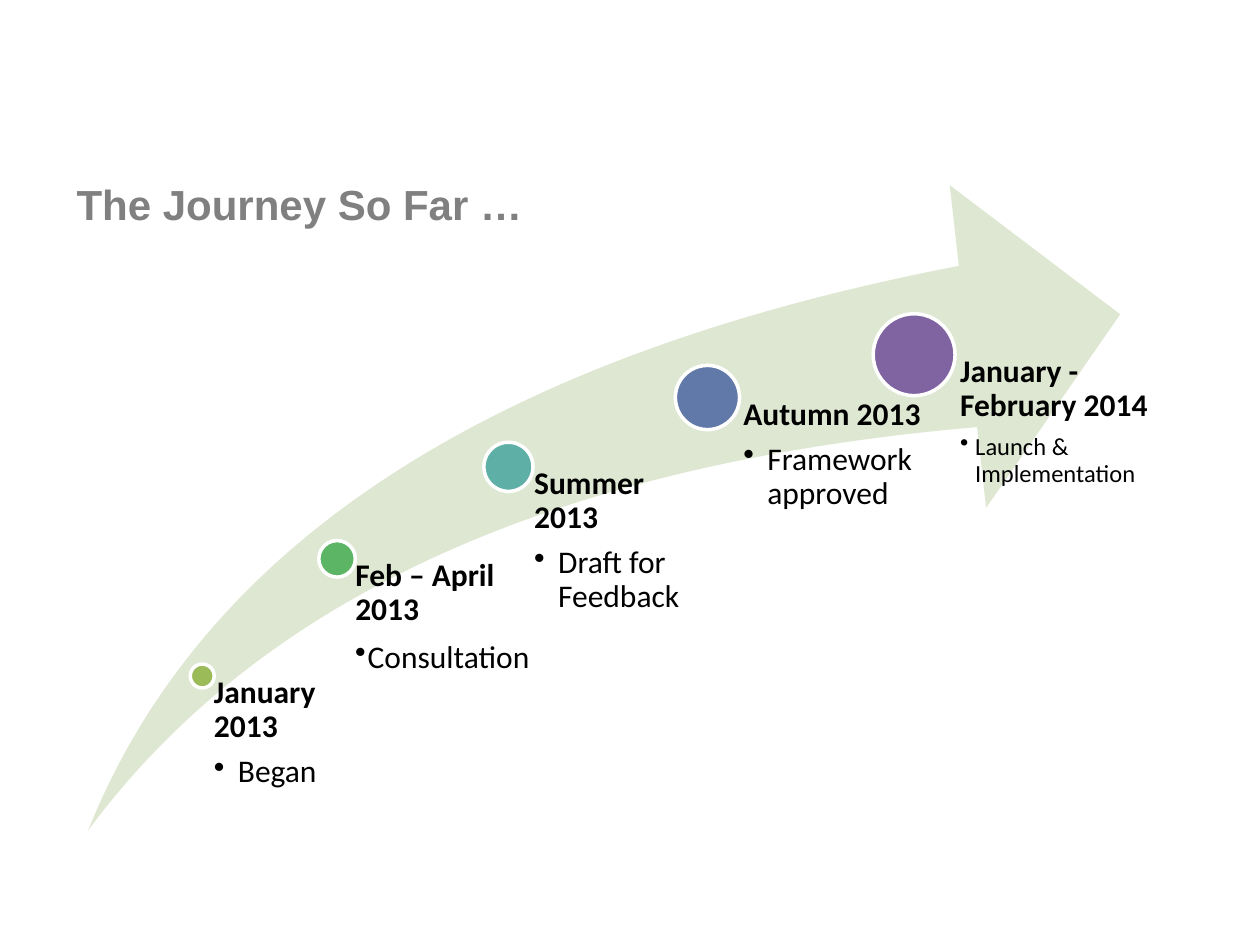
from lxml import etree
from pptx import Presentation
from pptx import util as u
from pptx.dml.color import RGBColor
from pptx.enum import shapes, text
from pptx.oxml.ns import qn

PX = 9144  # 100 px to the inch
COLORS = {
    "title": "808080", "body": "000000", "outline": "FFFFFF", "arrow": "DEE7D1",
    "olive": "9BBB59", "green": "5CB565", "teal": "5EAFA6",
    "blue": "6179A8", "purple": "8064A2",
}
ARROW_BOTTOM = 659

# dot left, dot top, diameter, colour, label left, label width, date, step, step size, indent
MILESTONES = [
    (151, 527, 19, "olive", 160, 107, "January 2013", "Began", 18, 19),
    (253, 429, 29, "green", 267, 136, "Feb – April 2013", None, 18, 19),
    (384, 351, 39, "teal", 403, 158, "Summer 2013", "Draft for Feedback", 18, 19),
    (536, 290, 51, "blue", 563, 202, "Autumn 2013", "Framework approved", 18, 19),
    (693, 249, 65, "purple", 728, 183, "January - February 2014",
     "Launch & Implementation", 14, 12),
]


def px(length):
    return u.Emu(length * PX)


def color(name):
    return RGBColor.from_string(COLORS[name])


class Deck:
    def __init__(self, slide, font="Calibri"):
        self.slide = slide
        self.font = font

    def shape(self, kind, left, top, width, height, fill, outlined=False):
        shape = self.slide.shapes.add_shape(kind, px(left), px(top), px(width), px(height))
        shape.shadow.inherit = False
        shape.fill.solid()
        shape.fill.fore_color.rgb = color(fill)
        if outlined:
            shape.line.color.rgb = color("outline")
            shape.line.width = u.Pt(2)
        else:
            shape.line.fill.background()
        return shape

    def box(self, left, top, width, height, insets=(10, 5, 10, 5)):
        frame = self.slide.shapes.add_textbox(px(left), px(top), px(width), px(height)).text_frame
        frame.word_wrap = True
        (frame.margin_left, frame.margin_top,
         frame.margin_right, frame.margin_bottom) = map(px, insets)
        return frame

    def words(self, paragraph, wording, size=18, bold=False, fill="body", font=None, bullet=0):
        """Fill a paragraph; bullet is the hanging indent in px, 0 for none."""
        paragraph.text = wording
        if bullet:
            props = paragraph._p.get_or_add_pPr()
            props.set("marL", str(px(bullet)))
            props.set("indent", str(-px(bullet)))
            etree.SubElement(props, qn("a:buChar")).set("char", "•")
        style = paragraph.font
        style.name = font or self.font
        style.size = u.Pt(size)
        style.bold = bold
        style.color.rgb = color(fill)

    def milestone(self, left, top, size, fill, label_left, label_width,
                  date, step, step_size, indent):
        self.shape(shapes.MSO_SHAPE.OVAL, left, top, size, size, fill, outlined=True)
        label_top = top + (size + 1) // 2
        label = self.box(label_left, label_top, label_width, ARROW_BOTTOM - label_top,
                         (round(size * 0.53), 0, 0, 0))
        heading = label.paragraphs[0]
        heading.line_spacing = 0.9
        heading.space_after = u.Pt(6.3)
        self.words(heading, date, bold=True)
        if step:
            detail = label.add_paragraph()
            detail.level = 1
            detail.line_spacing = 0.9
            self.words(detail, step, step_size, bullet=indent)


def main():
    presentation = Presentation()
    presentation.slide_width, presentation.slide_height = px(1000), px(750)
    deck = Deck(presentation.slides.add_slide(presentation.slide_layouts[6]))

    title = deck.box(51, 115, 900, 94)
    title.vertical_anchor = text.MSO_ANCHOR.MIDDLE
    deck.words(title.paragraphs[0], "The Journey So Far …", 24, True, "title", "Arial")

    arrow = deck.shape(shapes.MSO_SHAPE.SWOOSH_ARROW, 70, 147, 819, 512, "arrow")
    arrow.adjustments[0] = arrow.adjustments[1] = 0.25

    for milestone in MILESTONES:
        deck.milestone(*milestone)

    consultation = deck.box(272, 501, 205, 71)
    deck.words(consultation.paragraphs[0], "Consultation", bullet=10)

    presentation.save("out.pptx")


if __name__ == "__main__":
    main()
